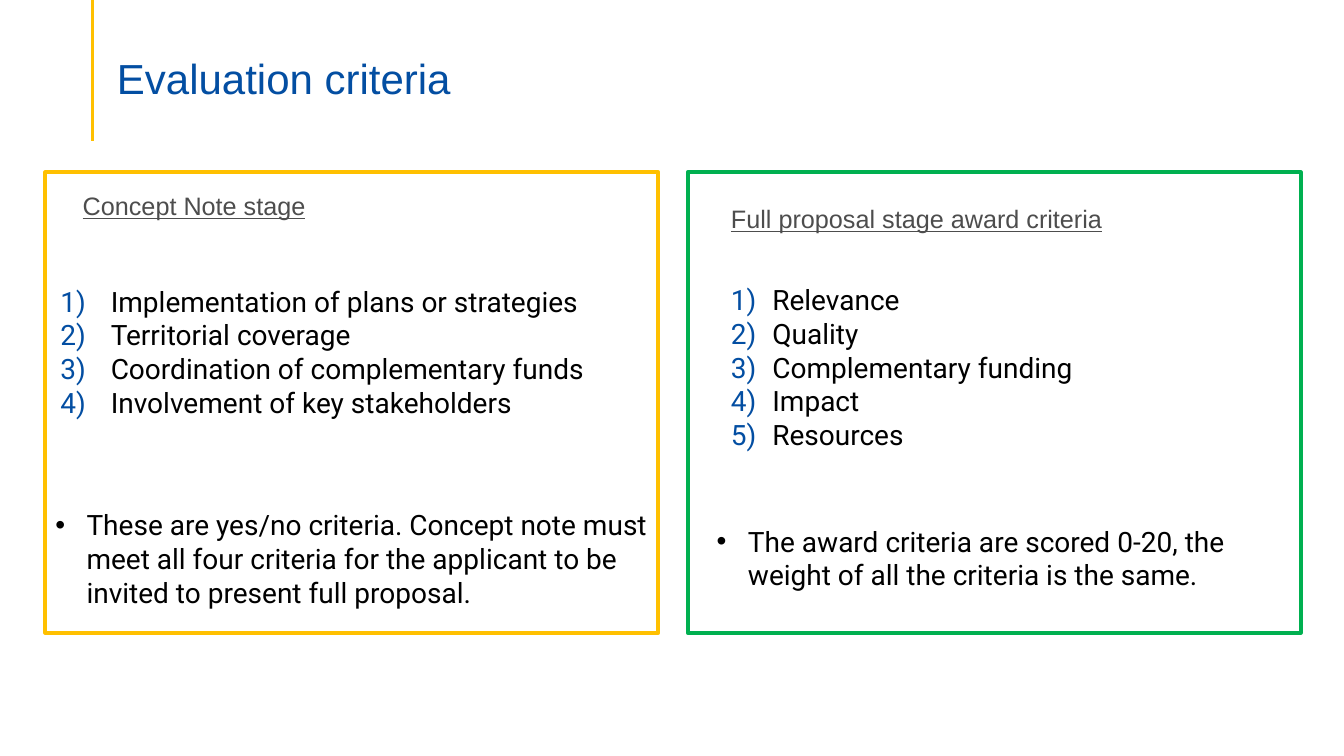
"""Builds the slide that compares evaluation criteria at two proposal stages."""
from lxml import etree
from pptx import Presentation
from pptx.dml.color import RGBColor
from pptx.enum.shapes import MSO_CONNECTOR, MSO_SHAPE
from pptx.enum.text import MSO_ANCHOR, MSO_AUTO_SIZE, PP_ALIGN
from pptx.oxml.ns import qn
from pptx.util import Inches, Pt

STRAIGHT = MSO_CONNECTOR.STRAIGHT
RECTANGLE = MSO_SHAPE.RECTANGLE
TOP = MSO_ANCHOR.TOP
NO_FIT = MSO_AUTO_SIZE.NONE
LEFT = PP_ALIGN.LEFT

BLUE, GREY, BLACK = "034EA2", "4D4D4D", "000000"
YELLOW, GREEN = "FFC000", "00B050"


def color(target, value):
    """Set a colour format, or a solid fill, to a hex value."""
    target.rgb = RGBColor.from_string(value)


def write(frame, lines, size=20, font="Roboto", ink=BLACK, marker="none",
          indent=0, underline=False, after=0, spacing=1.0):
    """Append one formatted paragraph per line to a text frame."""
    frame.word_wrap = True
    frame.auto_size = NO_FIT
    frame.vertical_anchor = TOP
    for line in lines:
        para = frame.paragraphs[0] if not frame.text else frame.add_paragraph()
        properties = para._p.get_or_add_pPr()
        properties.set("marL", str(Inches(indent)))
        properties.set("indent", str(-Inches(indent)))
        if marker == "number":
            tint = etree.SubElement(properties, qn("a:buClr"))
            etree.SubElement(tint, qn("a:srgbClr"), val=BLUE)
            etree.SubElement(properties, qn("a:buFont"), typeface="+mj-lt")
            properties[-1].set("typeface", font)
            etree.SubElement(properties, qn("a:buAutoNum"), type="arabicParenR")
        elif marker == "bullet":
            etree.SubElement(properties, qn("a:buFont"), typeface="Arial")
            etree.SubElement(properties, qn("a:buChar"), char="•")
        else:
            etree.SubElement(properties, qn("a:buNone"))
        para.alignment = LEFT
        para.line_spacing = spacing
        para.space_before = Pt(0)
        para.space_after = Pt(after)
        span = para.add_run()
        span.text = line
        span.font.name = font
        span.font.size = Pt(size)
        span.font.underline = underline
        color(span.font.color, ink)


deck = Presentation()
deck.slide_width, deck.slide_height = Inches(13.33), Inches(7.5)
page = deck.slides.add_slide(deck.slide_layouts[3])
title, concept, proposal = page.placeholders

rule = page.shapes.add_connector(
    STRAIGHT, Inches(0.92), Inches(0), Inches(0.92), Inches(1.4))
color(rule.line.color, YELLOW)
rule.line.width = Pt(2.25)
etree.SubElement(rule._element.spPr, qn("a:effectLst"))

for holder, left, top, width, height in (
        (title, 1.06, 0.53, 11.5, 1.25),
        (concept, 0.72, 1.84, 5.83, 4.59),
        (proposal, 7.15, 1.97, 5.83, 4.08)):
    holder.left, holder.top = Inches(left), Inches(top)
    holder.width, holder.height = Inches(width), Inches(height)

write(title.text_frame, ["Evaluation criteria"], size=30, font="Arial",
      ink=BLUE, spacing=0.9)
for holder, heading, after in (
        (concept, "Concept Note stage", 13.5),
        (proposal, "Full proposal stage award criteria", 35)):
    write(holder.text_frame, [heading], size=18, font="Arial", ink=GREY,
          underline=True, after=after)
write(proposal.text_frame,
      ["Relevance", "Quality", "Complementary funding", "Impact", "Resources"],
      marker="number", indent=0.41)

for left, outline in ((0.45, YELLOW), (6.82, GREEN)):
    border = page.shapes.add_shape(
        RECTANGLE, Inches(left), Inches(1.71), Inches(6.08), Inches(4.57))
    border.shadow.inherit = False
    border.fill.background()
    color(border.line.color, outline)
    border.line.width = Pt(2.75)

criteria = ["Implementation of plans or strategies", "Territorial coverage",
            "Coordination of complementary funds",
            "Involvement of key stakeholders"]
concept_note = ["These are yes/no criteria. Concept note must meet all four "
                "criteria for the applicant to be invited to present full "
                "proposal."]
scoring_note = ["The award criteria are scored 0-20, the weight of all the "
                "criteria is the same."]
for left, top, width, height, lines, marker, indent in (
        (0.5, 2.77, 5.48, 1.45, criteria, "number", 0.5),
        (0.45, 4.99, 6.08, 1.11, concept_note, "bullet", 0.31),
        (7.01, 5.15, 5.89, 0.77, scoring_note, "bullet", 0.31)):
    box = page.shapes.add_textbox(
        Inches(left), Inches(top), Inches(width), Inches(height))
    write(box.text_frame, lines, marker=marker, indent=indent)

deck.save("out.pptx")
